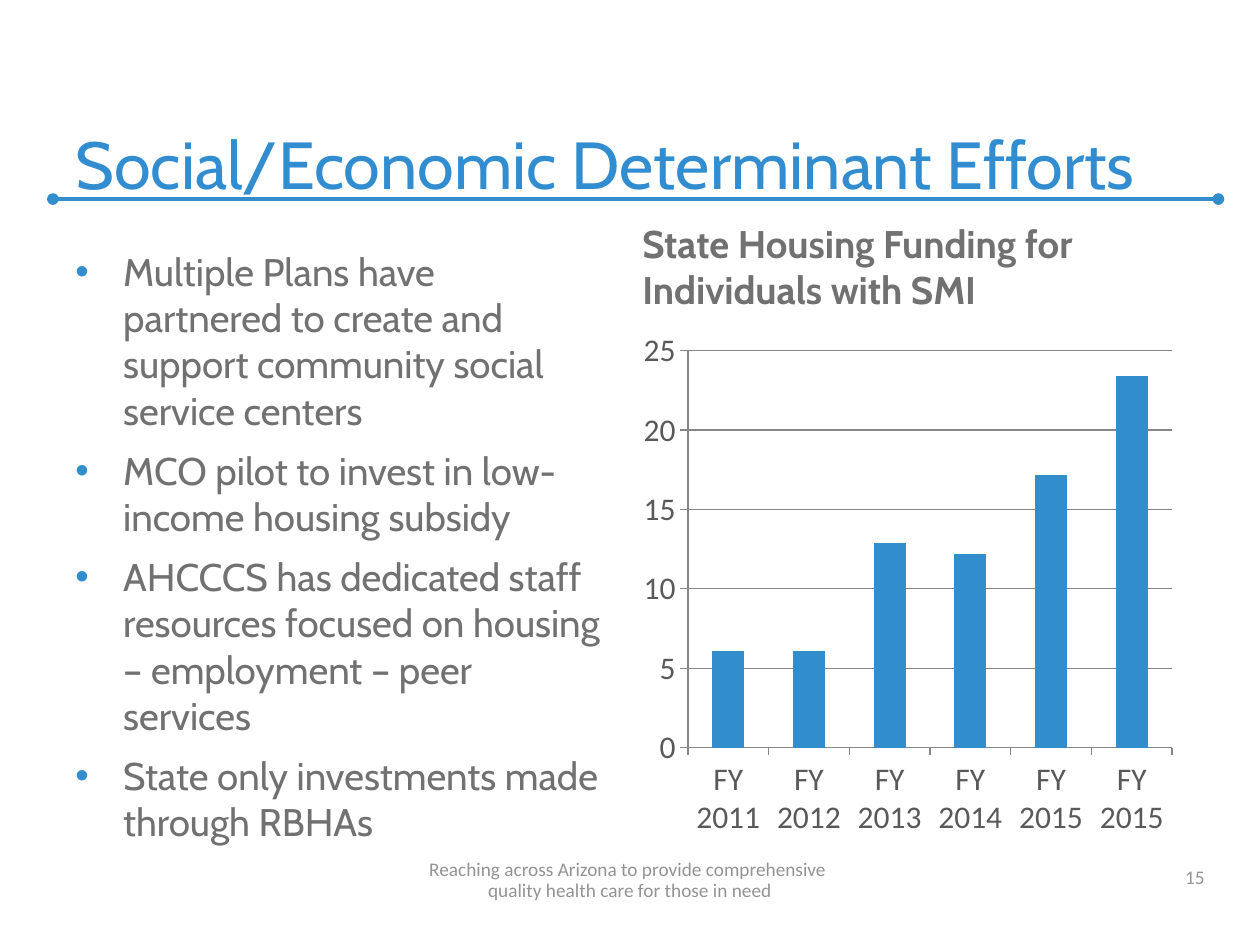
from dataclasses import dataclass

import pptx
import pptx.chart.data
import pptx.dml.color
import pptx.enum.chart
import pptx.enum.shapes
import pptx.enum.text
import pptx.oxml
import pptx.oxml.ns
import pptx.util
from lxml import etree
from pptx.util import Inches, Pt

Align = pptx.enum.text.PP_ALIGN
Anchor = pptx.enum.text.MSO_ANCHOR

BLUE = "318DCC"
TITLE_BLUE = "318DCF"
BODY_GRAY = "717171"
FOOTER_GRAY = "939393"
CHART_GRAY = "595959"
GRID_GRAY = "868686"


@dataclass
class TextBlock:
    left: float
    top: float
    width: float
    height: float
    paragraphs: list[str]
    size: float
    color: str
    font: str = "Cabin"
    bold: bool = False
    align: Align = Align.LEFT
    anchor: Anchor = Anchor.BOTTOM
    bulleted: bool = False
    line_spacing: float | None = None


TEXT_BLOCKS = [
    TextBlock(0.5, 0.33, 9.09, 1.33, ["Social/Economic Determinant Efforts"], 38, TITLE_BLUE),
    TextBlock(
        0.5, 1.92, 4.37, 4.8,
        [
            "Multiple Plans have partnered to create and support community social service centers",
            "MCO pilot to invest in low-income housing subsidy",
            "AHCCCS has dedicated staff resources focused on housing – employment – peer services",
            "State only investments made through RBHAs",
        ],
        22, BODY_GRAY, anchor=Anchor.TOP, bulleted=True,
    ),
    TextBlock(5, 1.83, 4.42, 0.7, ["State Housing Funding for Individuals with SMI"],
              22, BODY_GRAY, bold=True),
    TextBlock(0, 6.78, 10, 0.42,
              ["Reaching across Arizona to provide comprehensive \nquality health care for those in need"],
              11, FOOTER_GRAY, font="Calibri", align=Align.CENTER, line_spacing=12),
    TextBlock(7.33, 6.78, 2.33, 0.32, ["15"], 11, FOOTER_GRAY, font="Calibri", align=Align.RIGHT),
]

FUNDING = [("FY 2011", 6.1), ("FY 2012", 6.1), ("FY 2013", 12.9),
           ("FY 2014", 12.2), ("FY 2015", 17.2), ("FY 2015", 23.4)]


def rgb(value: str) -> pptx.dml.color.RGBColor:
    return pptx.dml.color.RGBColor.from_string(value)


def add_bullet(paragraph) -> None:
    properties = paragraph._p.get_or_add_pPr()
    properties.set("marL", str(Inches(0.38)))
    properties.set("indent", str(-Inches(0.38)))
    namespace = pptx.oxml.ns.nsdecls("a")
    for element in (
        f'<a:buClr {namespace}><a:srgbClr val="{BLUE}"/></a:buClr>',
        f'<a:buFont {namespace} typeface="Arial"/>',
        f'<a:buChar {namespace} char="•"/>',
    ):
        properties.append(pptx.oxml.parse_xml(element))


def add_text(slide, block: TextBlock) -> None:
    shape = slide.shapes.add_textbox(
        Inches(block.left), Inches(block.top), Inches(block.width), Inches(block.height))
    frame = shape.text_frame
    frame.word_wrap = True
    frame.vertical_anchor = block.anchor
    for index, text in enumerate(block.paragraphs):
        paragraph = frame.add_paragraph() if index else frame.paragraphs[0]
        if block.bulleted:
            add_bullet(paragraph)
        if index:
            paragraph.space_before = Pt(8)
        paragraph.alignment = block.align
        if block.line_spacing:
            paragraph.line_spacing = Pt(block.line_spacing)
        for line_index, line in enumerate(text.split("\n")):
            if line_index:
                paragraph.add_line_break()
            run = paragraph.add_run()
            run.text = line
            run.font.name = block.font
            run.font.size = Pt(block.size)
            run.font.bold = block.bold
            run.font.color.rgb = rgb(block.color)


def add_title_rule(slide) -> None:
    rule = slide.shapes.add_connector(
        pptx.enum.shapes.MSO_CONNECTOR.STRAIGHT,
        Inches(0.42), Inches(1.58), Inches(9.67), Inches(1.58))
    rule.line.color.rgb = rgb(BLUE)
    rule.line.width = Pt(2.25)
    line = rule.line._get_or_add_ln()
    for end in ("a:headEnd", "a:tailEnd"):
        etree.SubElement(line, pptx.oxml.ns.qn(end), type="oval")
    etree.SubElement(rule._element.spPr, pptx.oxml.ns.qn("a:effectLst"))


def add_funding_chart(slide) -> None:
    data = pptx.chart.data.CategoryChartData()
    data.categories = [year for year, _ in FUNDING]
    data.add_series("Series 1", [amount for _, amount in FUNDING])
    chart = slide.shapes.add_chart(
        pptx.enum.chart.XL_CHART_TYPE.COLUMN_CLUSTERED,
        Inches(5.02), Inches(2.55), Inches(4.37), Inches(4.17), data).chart
    chart.has_title = False
    chart.has_legend = False
    chart.font.name = "Calibri"
    chart.font.size = Pt(18)
    chart.font.color.rgb = rgb(CHART_GRAY)

    plot = chart.plots[0]
    plot.gap_width = 150
    plot.vary_by_categories = False
    fill = plot.series[0].format.fill
    fill.solid()
    fill.fore_color.rgb = rgb(BLUE)

    value_axis = chart.value_axis
    value_axis.minimum_scale = 0
    value_axis.maximum_scale = 25
    value_axis.major_unit = 5
    value_axis.has_major_gridlines = True
    for axis in (chart.category_axis, value_axis):
        axis.major_tick_mark = pptx.enum.chart.XL_TICK_MARK.OUTSIDE
    for part in (chart.category_axis, value_axis, value_axis.major_gridlines):
        part.format.line.color.rgb = rgb(GRID_GRAY)
        part.format.line.width = Pt(0.75)


def main() -> None:
    presentation = pptx.Presentation()
    presentation.slide_width = Inches(10)
    presentation.slide_height = Inches(7.5)
    slide = presentation.slides.add_slide(presentation.slide_layouts[6])
    add_title_rule(slide)
    for block in TEXT_BLOCKS:
        add_text(slide, block)
    add_funding_chart(slide)
    presentation.save("out.pptx")


if __name__ == "__main__":
    main()
